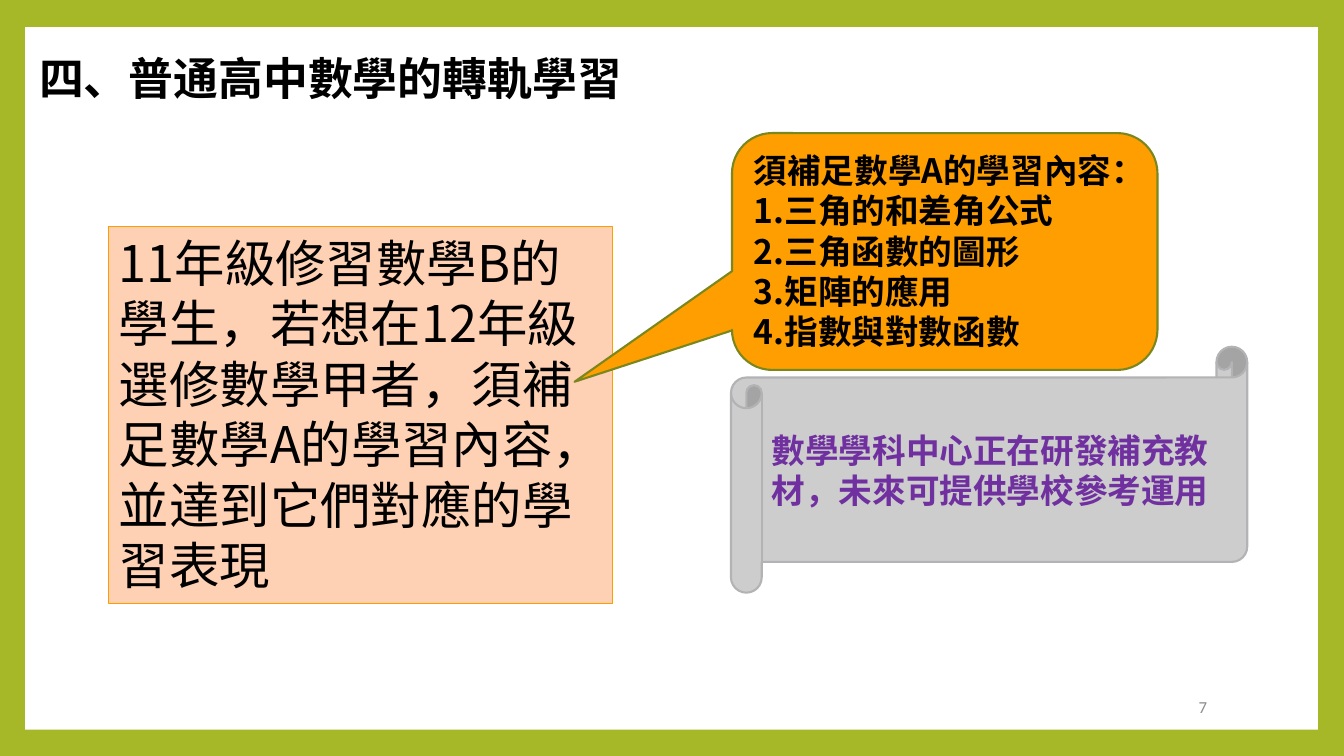
from dataclasses import dataclass

from lxml.etree import SubElement
from pptx import Presentation
from pptx.dml.color import RGBColor as RGB
from pptx.enum.shapes import MSO_SHAPE as SHAPE
from pptx.enum.text import MSO_ANCHOR as ANCHOR, PP_ALIGN as ALIGN
from pptx.oxml.ns import qn
from pptx.util import Inches, Pt


@dataclass(frozen=True)
class Theme:
    green: str = "A6B727"
    olive: str = "7B871D"
    white: str = "FFFFFF"
    black: str = "000000"
    peach: str = "FFD1B4"
    orange: str = "FE9E00"
    silver: str = "CDCDCD"
    silver_edge: str = "B3B3B5"
    purple: str = "7030A0"
    muted: str = "8C8C8C"
    cjk: str = "Noto Sans CJK SC"
    latin: str = "Calibri"
    title: int = 32
    body: int = 36
    note: int = 24
    number: int = 12


class Deck:
    def __init__(self, theme):
        self.theme = theme
        self.prs = Presentation()
        self.prs.slide_width, self.prs.slide_height = Inches(13.33), Inches(7.5)
        self.s = self.prs.slides.add_slide(self.prs.slide_layouts[6])
        self.paint(self.s.background.fill, theme.green)

    def paint(self, fill, color):
        fill.solid()
        fill.fore_color.rgb = RGB.from_string(color)

    def shape(self, kind, box, fill, line=None, width=1.5, adj=()):
        sp = self.s.shapes.add_shape(kind, *map(Inches, box))
        sp.shadow.inherit = False
        self.paint(sp.fill, fill)
        if line:
            self.paint(sp.line.fill, line)
            sp.line.width = Pt(width)
        else:
            sp.line.fill.background()
        for i, value in enumerate(adj):
            sp.adjustments[i] = value
        return sp

    def label(self, box, lines, **style):
        sp = self.s.shapes.add_textbox(*map(Inches, box))
        self.set_text(sp, lines, anchor=ANCHOR.MIDDLE, **style)

    def set_text(self, sp, lines, size, color=None, font=None, bold=False,
                 anchor=ANCHOR.TOP, align=ALIGN.LEFT, spacing=1.0):
        tf = sp.text_frame
        font = font or self.theme.cjk
        for name, value in {"word_wrap": True, "vertical_anchor": anchor}.items():
            setattr(tf, name, value)
        for i, text in enumerate(lines):
            p = tf.add_paragraph() if i else tf.paragraphs[0]
            for name, value in {"alignment": align, "line_spacing": spacing}.items():
                setattr(p, name, value)
            r = p.add_run()
            r.text = text
            for name, value in {"size": Pt(size), "bold": bold, "name": font}.items():
                setattr(r.font, name, value)
            r.font.color.rgb = RGB.from_string(color or self.theme.black)
            SubElement(r._r.get_or_add_rPr(), qn("a:ea"), typeface=font)


def main():
    t = Theme()
    deck = Deck(t)
    deck.shape(SHAPE.RECTANGLE, (0.25, 0.27, 12.82, 6.97), t.white)
    deck.label((0.29, 0.29, 8.5, 1.02), ["四、普通高中數學的轉軌學習"],
               size=t.title, bold=True, spacing=0.9)
    deck.label((10.2, 6.81, 1.87, 0.4), ["7"], size=t.number, color=t.muted,
               font=t.latin, align=ALIGN.RIGHT)

    rule = deck.shape(SHAPE.RECTANGLE, (1.08, 2.25, 5, 3.74), t.peach, t.orange, 0.79)
    deck.set_text(rule, ["11年級修習數學B的學生，若想在12年級選修數學甲者，"
                         "須補足數學A的學習內容，並達到它們對應的學習表現"], size=t.body)

    topics = ["三角的和差角公式", "三角函數的圖形", "矩陣的應用", "指數與對數函數"]
    callout = deck.shape(SHAPE.ROUNDED_RECTANGULAR_CALLOUT, (7.26, 1.32, 4.22, 2.35),
                         t.orange, t.olive, adj=(-0.87, 0.55, 0.17))
    deck.set_text(callout, ["須補足數學A的學習內容："]
                  + [f"{n}.{topic}" for n, topic in enumerate(topics, 1)],
                  size=t.note, bold=True)

    scroll = deck.shape(SHAPE.HORIZONTAL_SCROLL, (7.25, 3.44, 5.12, 2.44),
                        t.silver, t.silver_edge)
    deck.set_text(scroll, ["數學學科中心正在研發補充教材，未來可提供學校參考運用"],
                  size=t.note, color=t.purple, bold=True, anchor=ANCHOR.MIDDLE)
    deck.prs.save("out.pptx")


if __name__ == "__main__":
    main()
